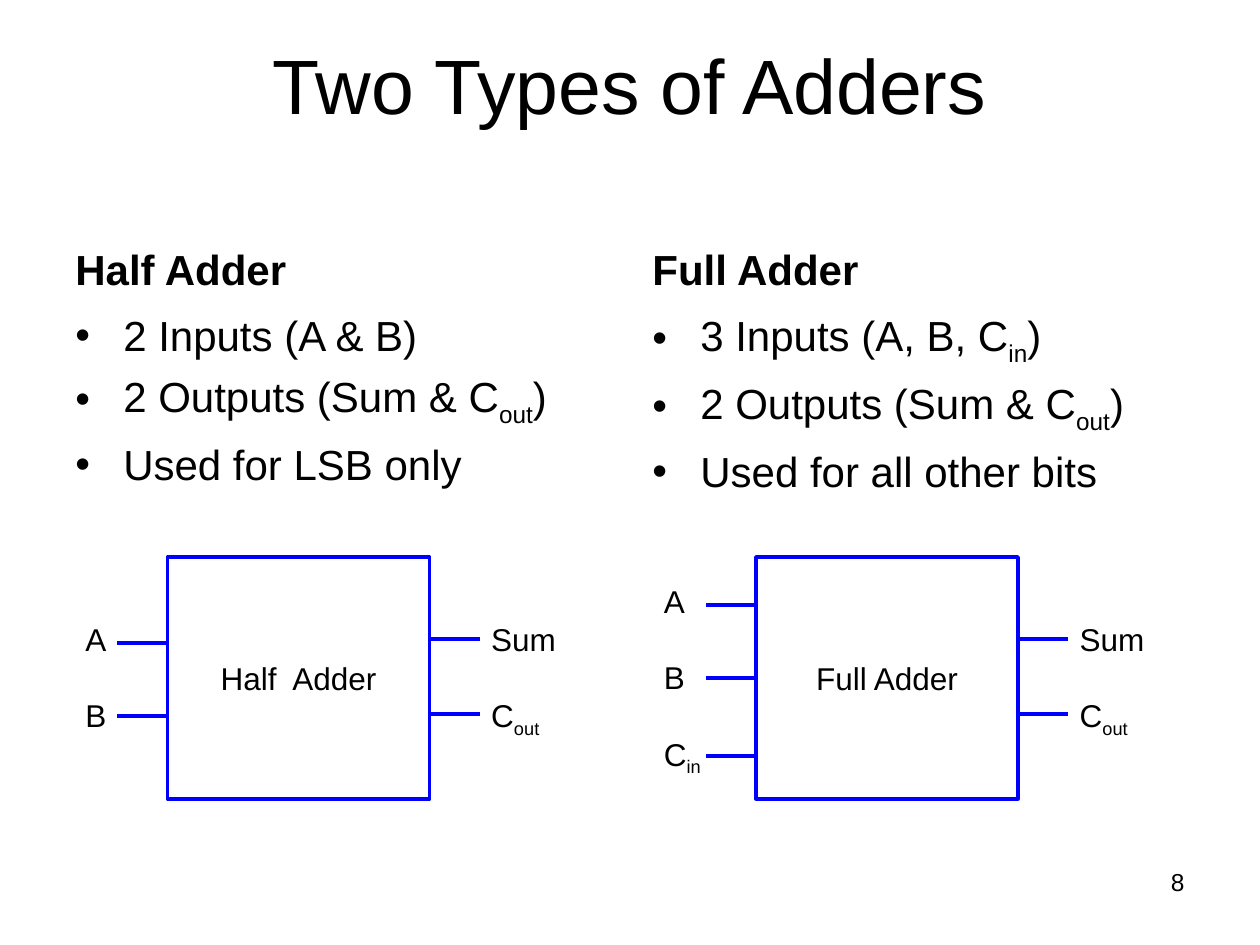
from lxml.etree import SubElement
from pptx import Presentation
from pptx.dml.color import RGBColor
from pptx.enum.shapes import MSO_CONNECTOR, MSO_SHAPE
from pptx.enum.text import MSO_ANCHOR, PP_ALIGN
from pptx.oxml.ns import qn
from pptx.util import Inches, Pt

BLACK, BLUE = "000000", "0000FF"
TITLE, PAGE = "Two Types of Adders", "8"
C_IN, C_OUT = ("C", "in"), ("C", "out")
OUTPUTS = {"labels": ["Sum", C_OUT], "heights": [5.07, 5.67], "top": 4.87, "size": (0.72, 1.0)}
ADDERS = [
    {
        "heading": "Half Adder",
        "bullets": ["2 Inputs (A & B)", ("2 Outputs (Sum & C", "out", ")"), "Used for LSB only"],
        "column": 0.5, "list_height": 1.62, "block": "Half  Adder", "block_left": 1.33,
        "inputs": {"labels": ["A", "B"], "heights": [5.1, 5.68],
                   "left": 0.58, "top": 4.87, "size": (0.37, 1.01)},
    },
    {
        "heading": "Full Adder",
        "bullets": [("3 Inputs (A, B, C", "in", ")"), ("2 Outputs (Sum & C", "out", ")"),
                    "Used for all other bits"],
        "column": 5.08, "list_height": 1.45, "block": "Full Adder", "block_left": 6.0,
        "inputs": {"labels": ["A", "B", C_IN], "heights": [4.8, 5.38, 6.0],
                   "left": 5.17, "top": 4.57, "size": (0.51, 1.6)},
    },
]
COLUMN_WIDTH, HEADING_TOP, HEADING_HEIGHT, LIST_TOP = 4.42, 1.68, 0.7, 2.41
BLOCK_TOP, BLOCK_WIDTH, BLOCK_HEIGHT, STUB = 4.42, 2.08, 1.92, 0.4
BLOCK_MIDDLE = BLOCK_TOP + BLOCK_HEIGHT / 2
LEFT_SIDE, RIGHT_SIDE = 1, 3


def colour(value):
    return RGBColor.from_string(value)


def add_bullet(paragraph):
    properties = paragraph._p.get_or_add_pPr()
    properties.set("marL", str(Inches(0.38)))
    properties.set("indent", str(-Inches(0.38)))
    SubElement(properties, qn("a:buFont")).set("typeface", "Arial")
    SubElement(properties, qn("a:buChar")).set("char", "•")


def write(frame, lines, size, align=PP_ALIGN.LEFT, bold=False, gap=0, bullets=False):
    for index, line in enumerate(lines):
        paragraph = frame.paragraphs[0] if index == 0 else frame.add_paragraph()
        paragraph.alignment = align
        if index and gap:
            paragraph.space_before = Pt(gap)
        if bullets:
            add_bullet(paragraph)
        font = paragraph.font
        font.name, font.size, font.bold = "Arial", Pt(size), bold
        font.color.rgb = colour(BLACK)
        parts = (line,) if isinstance(line, str) else line
        for position, part in enumerate(parts):
            run = paragraph.add_run()
            run.text = part
            if position == 1:
                run._r.get_or_add_rPr().set("baseline", "-25000")


def add_text(slide, box, lines, size, anchor=MSO_ANCHOR.TOP, wrap=True, **style):
    frame = slide.shapes.add_textbox(*map(Inches, box)).text_frame
    frame.word_wrap = wrap
    frame.vertical_anchor = anchor
    write(frame, lines, size, **style)


def add_block(slide, left, name):
    block = slide.shapes.add_shape(
        MSO_SHAPE.RECTANGLE, *map(Inches, (left, BLOCK_TOP, BLOCK_WIDTH, BLOCK_HEIGHT)))
    block.shadow.inherit = False
    block.fill.background()
    block.line.color.rgb = colour(BLUE)
    block.line.width = Pt(2)
    block.text_frame.vertical_anchor = MSO_ANCHOR.MIDDLE
    write(block.text_frame, [name], 18, PP_ALIGN.CENTER)
    return block


def add_ports(slide, block, side, edge, ports, label_left):
    far = edge + (STUB if side == RIGHT_SIDE else -STUB)
    for height in ports["heights"]:
        wire = slide.shapes.add_connector(
            MSO_CONNECTOR.STRAIGHT, *map(Inches, (edge, height, far, height)))
        wire.line.color.rgb = colour(BLUE)
        wire.line.width = Pt(2.25)
        SubElement(wire._element.spPr, qn("a:effectLst"))
        if abs(height - BLOCK_MIDDLE) < 0.01:
            wire.begin_connect(block, side)
    add_text(slide, (label_left, ports["top"], *ports["size"]), ports["labels"], 18,
             wrap=False, gap=22)


def add_adder(slide, adder):
    column = adder["column"]
    add_text(slide, (column, HEADING_TOP, COLUMN_WIDTH, HEADING_HEIGHT), [adder["heading"]], 24,
             MSO_ANCHOR.BOTTOM, bold=True)
    add_text(slide, (column, LIST_TOP, COLUMN_WIDTH, adder["list_height"]), adder["bullets"], 24,
             gap=6, bullets=True)
    left = adder["block_left"]
    right = left + BLOCK_WIDTH
    block = add_block(slide, left, adder["block"])
    add_ports(slide, block, LEFT_SIDE, left, adder["inputs"], adder["inputs"]["left"])
    add_ports(slide, block, RIGHT_SIDE, right, OUTPUTS, right + STUB - 0.01)


def main():
    """Build the slide comparing half and full adders."""
    presentation = Presentation()
    presentation.slide_width, presentation.slide_height = Inches(10), Inches(7.5)
    slide = presentation.slides.add_slide(presentation.slide_layouts[6])
    add_text(slide, (0, 0, 10, 1.33), [TITLE], 44, MSO_ANCHOR.MIDDLE, align=PP_ALIGN.CENTER)
    for adder in ADDERS:
        add_adder(slide, adder)
    add_text(slide, (7.17, 6.83, 2.33, 0.52), [PAGE], 14, align=PP_ALIGN.RIGHT)
    presentation.save("out.pptx")


if __name__ == "__main__":
    main()
